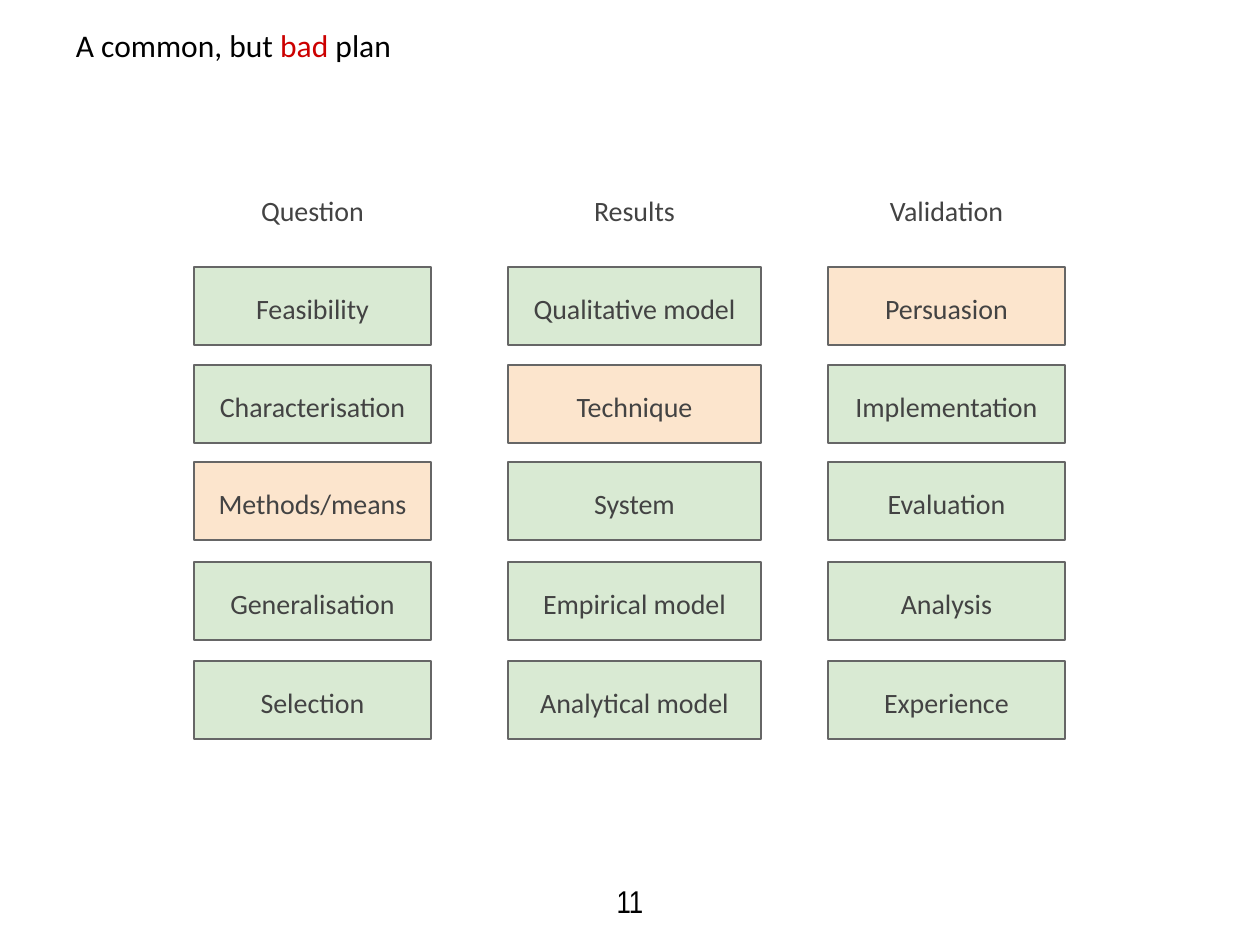
from pptx import Presentation
from pptx.dml.color import RGBColor
from pptx.enum.shapes import MSO_SHAPE
from pptx.enum.text import MSO_ANCHOR, PP_ALIGN
from pptx.util import Pt

RECT = MSO_SHAPE.RECTANGLE
MIDDLE, TOP = MSO_ANCHOR.MIDDLE, MSO_ANCHOR.TOP
CENTER, LEFT = PP_ALIGN.CENTER, PP_ALIGN.LEFT
SCALE = 914400 / 126  # EMU per px

THEME = {
    "font": "Calibri", "narrow": "Arial Narrow",
    "title": 18, "label": 16,
    "black": "000000", "red": "CC0000", "text": "434343",
    "good": "D9EAD3", "bad": "FCE5CD", "line": "666666",
}


def px(*nums):
    return [round(n * SCALE) for n in nums]


def write(shape, parts, size, font="font", align=CENTER, anchor=MIDDLE,
          pad=(13, 13), space=1.0):
    """Fill a shape with one paragraph of (text, colour) runs."""
    frame = shape.text_frame
    frame.word_wrap = True
    frame.vertical_anchor = anchor
    frame.margin_left = frame.margin_right = px(pad[0])[0]
    frame.margin_top = frame.margin_bottom = px(pad[1])[0]
    para = frame.paragraphs[0]
    para.alignment = align
    para.line_spacing = space
    for text, color in parts:
        run = para.add_run()
        run.text = text
        run.font.name = THEME[font]
        run.font.size = Pt(THEME[size])
        run.font.color.rgb = RGBColor.from_string(THEME[color])


prs = Presentation()
prs.slide_width, prs.slide_height = px(1260, 945)
slide = prs.slides.add_slide(prs.slide_layouts[6])
shapes = slide.shapes

# Page number
page = shapes.add_textbox(*px(562, 876, 136, 50))
write(page, [("11", "black")], "title", font="narrow", pad=(9, 5))

# Title
title = shapes.add_textbox(*px(63, 20, 1134, 71))
write(title, [("A common, but ", "black"), ("bad", "red"), (" plan", "black")],
      "title", align=LEFT, anchor=TOP, pad=(13, 6))

# Columns: left, width, heading, labels, marked label
HEAD, HIGH = 169, 78
ROWS = [267, 365, 462, 562, 661]
COLS = [
    (194, 237, "Question",
     ["Feasibility", "Characterisation", "Methods/means", "Generalisation",
      "Selection"], "Methods/means"),
    (508, 253, "Results",
     ["Qualitative model", "Technique", "System", "Empirical model",
      "Analytical model"], "Technique"),
    (828, 237, "Validation",
     ["Persuasion", "Implementation", "Evaluation", "Analysis",
      "Experience"], "Persuasion"),
]
for left, width, head, labels, marked in COLS:
    box = shapes.add_textbox(*px(left, HEAD, width, HIGH))
    write(box, [(head, "text")], "label", space=1.15)
    for top, label in zip(ROWS, labels):
        box = shapes.add_shape(RECT, *px(left, top, width, HIGH))
        box.shadow.inherit = False
        box.fill.solid()
        fill = "bad" if label == marked else "good"
        box.fill.fore_color.rgb = RGBColor.from_string(THEME[fill])
        box.line.color.rgb = RGBColor.from_string(THEME["line"])
        box.line.width = Pt(0.75)
        write(box, [(label, "text")], "label", space=1.15)

prs.save("out.pptx")
